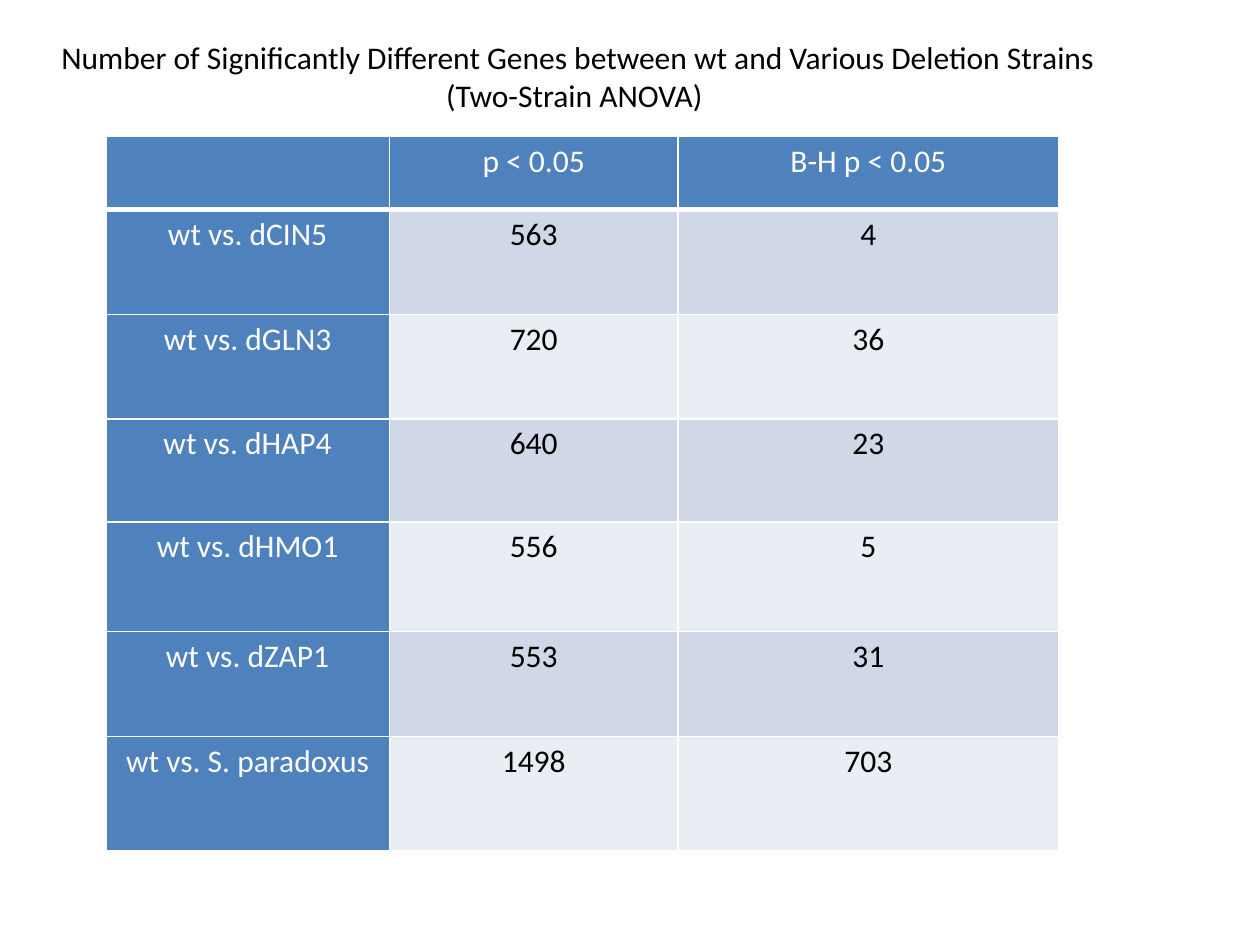
from lxml.etree import SubElement
from pptx import Presentation
from pptx.dml.color import RGBColor
from pptx.enum.text import MSO_AUTO_SIZE as AutoSize, PP_ALIGN as Align
from pptx.oxml.ns import qn
from pptx.util import Pt

FONT = "Calibri"
BLUE, WHITE, BLACK = "4F81BD", "FFFFFF", "000000"
BANDS = ["D0D8E8", "E9EDF4"]
TITLE = [
    "Number of Significantly Different Genes between wt and Various Deletion Strains",
    "(Two-Strain ANOVA) ",
]
ROWS = [
    ["", "p < 0.05", "B-H p < 0.05"],
    ["wt vs. dCIN5", "563", "4"],
    ["wt vs. dGLN3", "720", "36"],
    ["wt vs. dHAP4", "640", "23"],
    ["wt vs. dHMO1", "556", "5"],
    ["wt vs. dZAP1", "553", "31"],
    ["wt vs. S. paradoxus", "1498", "703"],
]
COL_WIDTHS = [162, 165, 217.5]
ROW_HEIGHTS = [41.8, 59.8, 59.8, 59, 62.6, 59.8, 65.5]


def rgb(color):
    return RGBColor.from_string(color)


def format_text(tf, color, spacing=None):
    for p in tf.paragraphs:
        p.alignment = Align.CENTER
        p.line_spacing = spacing
        for r in p.runs:
            r.font.name = FONT
            r.font.size = Pt(18)
            r.font.color.rgb = rgb(color)


def add_title(slide, left, top, width, height):
    tf = slide.shapes.add_textbox(Pt(left), Pt(top), Pt(width), Pt(height)).text_frame
    tf.word_wrap = False
    tf.auto_size = AutoSize.SHAPE_TO_FIT_TEXT
    tf.text = "\n".join(TITLE)
    format_text(tf, BLACK)


def set_borders(cell, bottom):
    tc_pr = cell._tc.get_or_add_tcPr()
    for side, width in zip("LRTB", [1, 1, 1, bottom]):
        ln = SubElement(tc_pr, qn(f"a:ln{side}"), w=str(Pt(width)))
        fill = SubElement(ln, qn("a:solidFill"))
        SubElement(fill, qn("a:srgbClr"), val=WHITE)


def fill_cell(cell, text, row, col):
    heading = row == 0 or col == 0
    set_borders(cell, bottom=3 if row == 0 else 1)
    cell.fill.solid()
    cell.fill.fore_color.rgb = rgb(BLUE if heading else BANDS[(row - 1) % 2])
    cell.margin_left = cell.margin_right = Pt(5.4)
    cell.margin_top = cell.margin_bottom = 0
    cell.text_frame.text = text
    format_text(cell.text_frame, WHITE if heading else BLACK, spacing=1.15)


def add_gene_table(slide, left, top):
    table = slide.shapes.add_table(
        len(ROWS), len(COL_WIDTHS), Pt(left), Pt(top),
        Pt(sum(COL_WIDTHS)), Pt(sum(ROW_HEIGHTS)),
    ).table
    table.first_col = True
    for column, width in zip(table.columns, COL_WIDTHS):
        column.width = Pt(width)
    for i, (height, texts) in enumerate(zip(ROW_HEIGHTS, ROWS)):
        table.rows[i].height = Pt(height)
        for j, text in enumerate(texts):
            fill_cell(table.cell(i, j), text, i, j)


def main():
    prs = Presentation()
    prs.slide_width, prs.slide_height = Pt(720), Pt(540)
    slide = prs.slides.add_slide(prs.slide_layouts[6])
    add_gene_table(slide, 60.5, 78)
    add_title(slide, 24, 18, 612.5, 51)
    prs.save("out.pptx")


if __name__ == "__main__":
    main()
